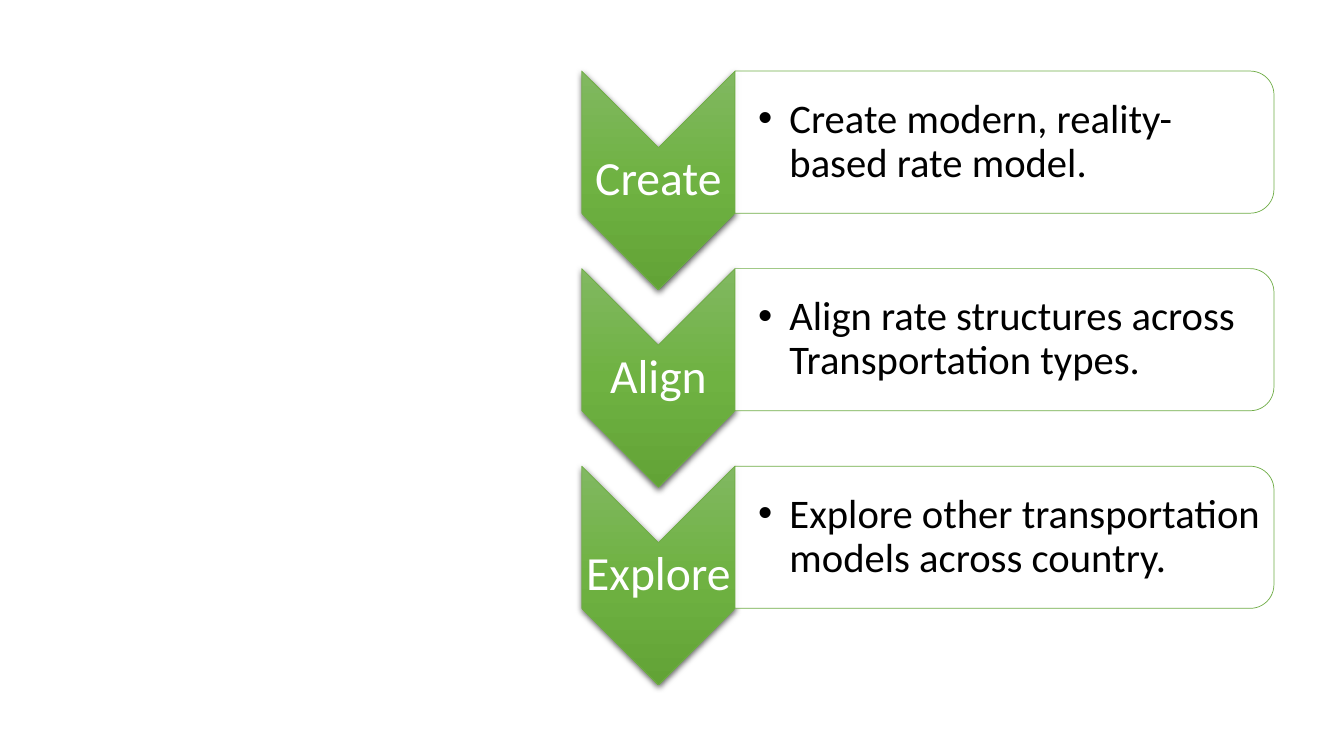
from lxml.etree import SubElement
from pptx import Presentation
from pptx.dml.color import RGBColor
from pptx.enum.shapes import MSO_SHAPE
from pptx.enum.text import MSO_ANCHOR, PP_ALIGN
from pptx.oxml import parse_xml
from pptx.oxml.ns import nsdecls, qn
from pptx.util import Inches, Pt

SLIDE_W, SLIDE_H = 13.33, 7.5
COLORS = {"edge": "70AD47", "light": "81B861", "middle": "6FB242", "dark": "62A336",
          "panel": "FFFFFF", "label": "FFFFFF", "detail": "000000", "shadow": "000000"}
FONT = "Calibri"
STEPS = [
    ("Create", "Create modern, reality-based rate model."),
    ("Align", "Align rate structures across Transportation types."),
    ("Explore", "Explore other transportation models across country."),
]
LIST_LEFT, LIST_TOP, LIST_W = 5.77, 0.705, 6.865
STEP_PITCH = 1.96
ARROW_W, ARROW_H = 1.52, 2.17
PANEL_H = 1.41
INSET = 0.02


def add_turned_shape(slide, kind, left, top, width, height):
    middle_x, middle_y = left + width / 2, top + height / 2
    turned = slide.shapes.add_shape(
        kind, Inches(middle_x - height / 2), Inches(middle_y - width / 2),
        Inches(height), Inches(width))
    turned.rotation = 90
    turned.shadow.inherit = False
    turned.line.color.rgb = RGBColor.from_string(COLORS["edge"])
    turned.line.width = Pt(0.5)
    return turned


def add_text(slide, text, left, top, width, height, size, color,
             align=PP_ALIGN.LEFT, inset_left=INSET, bullet_indent=0):
    box = slide.shapes.add_textbox(Inches(left), Inches(top), Inches(width), Inches(height))
    frame = box.text_frame
    frame.word_wrap = True
    frame.vertical_anchor = MSO_ANCHOR.MIDDLE
    frame.margin_left = Inches(inset_left)
    frame.margin_top = frame.margin_right = frame.margin_bottom = Inches(INSET)
    paragraph = frame.paragraphs[0]
    paragraph.alignment = align
    paragraph.line_spacing = 0.9
    run = paragraph.add_run()
    run.text = text
    run.font.name = FONT
    run.font.size = Pt(size)
    run.font.color.rgb = RGBColor.from_string(color)
    if bullet_indent:
        properties = paragraph._p.get_or_add_pPr()
        properties.set("marL", str(Inches(bullet_indent)))
        properties.set("indent", str(-Inches(bullet_indent)))
        SubElement(properties, qn("a:buFont"), typeface="Arial")
        SubElement(properties, qn("a:buChar"), char="•")


def shade_arrow(arrow):
    arrow.fill.gradient()
    gradient = arrow._element.spPr.find(qn("a:gradFill"))
    stops = "".join(
        f'<a:gs pos="{share * 1000}"><a:srgbClr val="{COLORS[tone]}"/></a:gs>'
        for share, tone in ((0, "light"), (50, "middle"), (100, "dark")))
    gradient.getparent().replace(gradient, parse_xml(
        f'<a:gradFill {nsdecls("a")} rotWithShape="1"><a:gsLst>{stops}</a:gsLst>'
        '<a:lin ang="0" scaled="0"/></a:gradFill>'))
    effects = arrow._element.spPr.find(qn("a:effectLst"))
    effects.append(parse_xml(
        f'<a:outerShdw {nsdecls("a")} blurRad="{Pt(4.5)}" dist="{Pt(1.5)}" '
        'dir="5400000" algn="ctr" rotWithShape="0">'
        f'<a:srgbClr val="{COLORS["shadow"]}"><a:alpha val="63000"/></a:srgbClr>'
        '</a:outerShdw>'))


def add_arrow(slide, label, left, top, width, height):
    shade_arrow(add_turned_shape(slide, MSO_SHAPE.CHEVRON, left, top, width, height))
    notch = width / 2
    add_text(slide, label, left, top + notch, width, height - 2 * notch,
             size=34, color=COLORS["label"], align=PP_ALIGN.CENTER)


def add_panel(slide, detail, left, top, width, height):
    panel = add_turned_shape(slide, MSO_SHAPE.ROUND_2_SAME_RECTANGLE, left, top, width, height)
    panel.fill.solid()
    panel.fill.fore_color.rgb = RGBColor.from_string(COLORS["panel"])
    tint = panel._element.spPr.find(qn("a:solidFill"))[0]
    SubElement(tint, qn("a:alpha"), val="90000")
    corner = 0.07
    add_text(slide, detail, left, top + corner, width - corner, height - 2 * corner,
             size=29, color=COLORS["detail"], inset_left=0.23, bullet_indent=0.31)


def add_step_list(slide, steps, left, top, width):
    for row, (label, detail) in enumerate(steps):
        step_top = top + row * STEP_PITCH
        add_arrow(slide, label, left, step_top, ARROW_W, ARROW_H)
        add_panel(slide, detail, left + ARROW_W, step_top, width - ARROW_W, PANEL_H)


def main():
    deck = Presentation()
    deck.slide_width, deck.slide_height = Inches(SLIDE_W), Inches(SLIDE_H)
    slide = deck.slides.add_slide(deck.slide_layouts[6])
    add_step_list(slide, STEPS, LIST_LEFT, LIST_TOP, LIST_W)
    deck.save("out.pptx")


if __name__ == "__main__":
    main()
